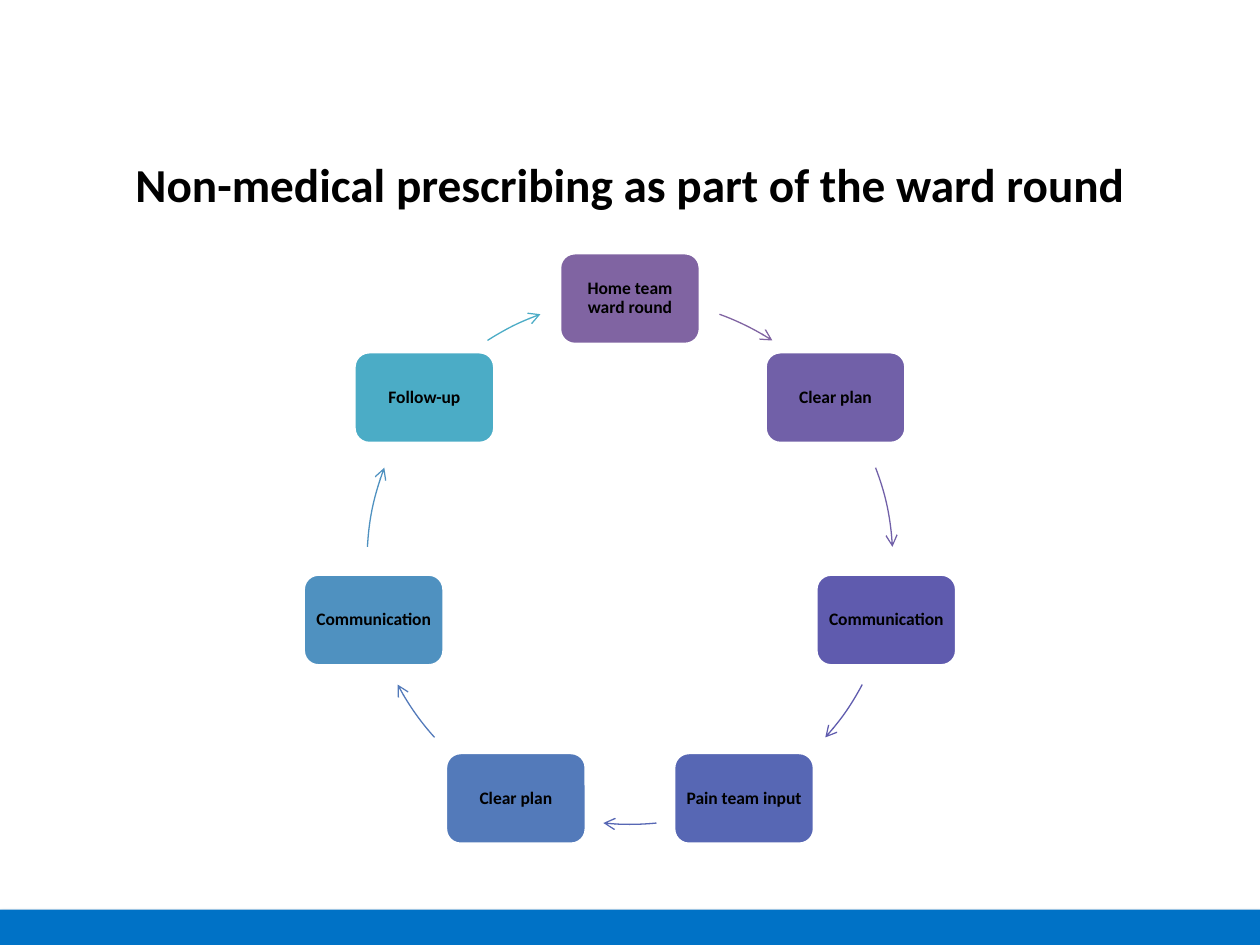
from dataclasses import dataclass
from math import cos, radians, sin

from lxml.etree import SubElement
from pptx import Presentation
from pptx.dml.color import RGBColor
from pptx.enum.shapes import MSO_SHAPE
from pptx.enum.text import MSO_ANCHOR, MSO_AUTO_SIZE, PP_ALIGN
from pptx.oxml.ns import qn
from pptx.util import Cm, Pt


@dataclass(frozen=True)
class Theme:
    font: str = "Calibri"
    text: str = "000000"
    white: str = "FFFFFF"
    bar: str = "0072C6"
    title_size: float = 27
    label_size: float = 10
    border_width: float = 2
    arrow_width: float = 0.75


@dataclass(frozen=True)
class Step:
    """A box of the cycle; the angles (clockwise from the top) bound its outgoing arrow."""
    label: str
    color: str
    arrow_start: float
    arrow_end: float


THEME = Theme()
PAGE_WIDTH, PAGE_HEIGHT = 25.4, 19.05
BAR_HEIGHT = 0.71
CENTER_X, CENTER_Y, RADIUS = 12.7, 11.32, 5.3
BOX_WIDTH, BOX_HEIGHT = 2.84, 1.85
BOX_MARGIN = 0.1

STEPS = [
    Step("Home team ward round", "8064A2", 19.9, 32.8),
    Step("Clear plan", "7160A8", 69.1, 86.8),
    Step("Communication", "5F5BAE", 117.9, 132),
    Step("Pain team input", "5767B4", 174.2, 185.8),
    Step("Clear plan", "537ABA", 228, 242.1),
    Step("Communication", "4F91C0", 273.2, 290.9),
    Step("Follow-up", "4BACC6", 327.2, 340.1),
]


def write_text(frame, text: str, *, size: float, line_spacing: float = 1.0) -> None:
    frame.word_wrap = True
    frame.auto_size = MSO_AUTO_SIZE.NONE
    frame.vertical_anchor = MSO_ANCHOR.MIDDLE
    para = frame.paragraphs[0]
    para.alignment = PP_ALIGN.CENTER
    para.line_spacing = line_spacing
    span = para.add_run()
    span.text = text
    span.font.name = THEME.font
    span.font.size = Pt(size)
    span.font.bold = True
    span.font.color.rgb = RGBColor.from_string(THEME.text)


def add_filled_shape(page, kind, left: float, top: float, width: float, height: float, color: str):
    shape = page.shapes.add_shape(kind, Cm(left), Cm(top), Cm(width), Cm(height))
    shape.shadow.inherit = False
    shape.fill.solid()
    shape.fill.fore_color.rgb = RGBColor.from_string(color)
    shape.line.fill.background()
    return shape


def add_bottom_bar(page) -> None:
    bar = add_filled_shape(page, MSO_SHAPE.RECTANGLE, 0, PAGE_HEIGHT - BAR_HEIGHT,
                           PAGE_WIDTH, BAR_HEIGHT, THEME.bar)
    effects = bar._element.spPr.find(qn("a:effectLst"))
    shadow = SubElement(effects, qn("a:outerShdw"), blurRad=str(Pt(3.1)), dist=str(Pt(1.8)),
                        dir="5400000", rotWithShape="0")
    color = SubElement(shadow, qn("a:srgbClr"), val="000000")
    SubElement(color, qn("a:alpha"), val="35000")


def add_step_box(page, step: Step, angle: float) -> None:
    left = CENTER_X + RADIUS * sin(radians(angle)) - BOX_WIDTH / 2
    top = CENTER_Y - RADIUS * cos(radians(angle)) - BOX_HEIGHT / 2
    box = add_filled_shape(page, MSO_SHAPE.ROUNDED_RECTANGLE, left, top,
                           BOX_WIDTH, BOX_HEIGHT, step.color)
    box.line.color.rgb = RGBColor.from_string(THEME.white)
    box.line.width = Pt(THEME.border_width)
    frame = box.text_frame
    frame.margin_left = frame.margin_right = Cm(BOX_MARGIN)
    frame.margin_top = frame.margin_bottom = Cm(BOX_MARGIN)
    write_text(frame, step.label, size=THEME.label_size, line_spacing=0.9)


def arc_adjustment(angle: float) -> float:
    """Turn degrees clockwise from the top into the arc's own unit, counted from the right."""
    return (angle - 90) % 360 * 0.6


def add_step_arrow(page, step: Step) -> None:
    arrow = page.shapes.add_shape(MSO_SHAPE.ARC, Cm(CENTER_X - RADIUS), Cm(CENTER_Y - RADIUS),
                                  Cm(2 * RADIUS), Cm(2 * RADIUS))
    arrow.shadow.inherit = False
    arrow.adjustments[0] = arc_adjustment(step.arrow_start)
    arrow.adjustments[1] = arc_adjustment(step.arrow_end)
    arrow.fill.background()
    arrow.line.color.rgb = RGBColor.from_string(step.color)
    arrow.line.width = Pt(THEME.arrow_width)
    SubElement(arrow.line._get_or_add_ln(), qn("a:tailEnd"), type="arrow")


def add_title(page, text: str) -> None:
    title = page.shapes.title
    title.left, title.top, title.width, title.height = Cm(1.27), Cm(2.97), Cm(22.86), Cm(1.45)
    write_text(title.text_frame, text, size=THEME.title_size)


def main() -> None:
    deck = Presentation()
    deck.slide_width, deck.slide_height = Cm(PAGE_WIDTH), Cm(PAGE_HEIGHT)
    page = deck.slides.add_slide(deck.slide_layouts.get_by_name("Title Only"))
    add_bottom_bar(page)
    for index, step in enumerate(STEPS):
        add_step_box(page, step, index * 360 / len(STEPS))
        add_step_arrow(page, step)
    add_title(page, "Non-medical prescribing as part of the ward round")
    deck.save("out.pptx")


if __name__ == "__main__":
    main()
